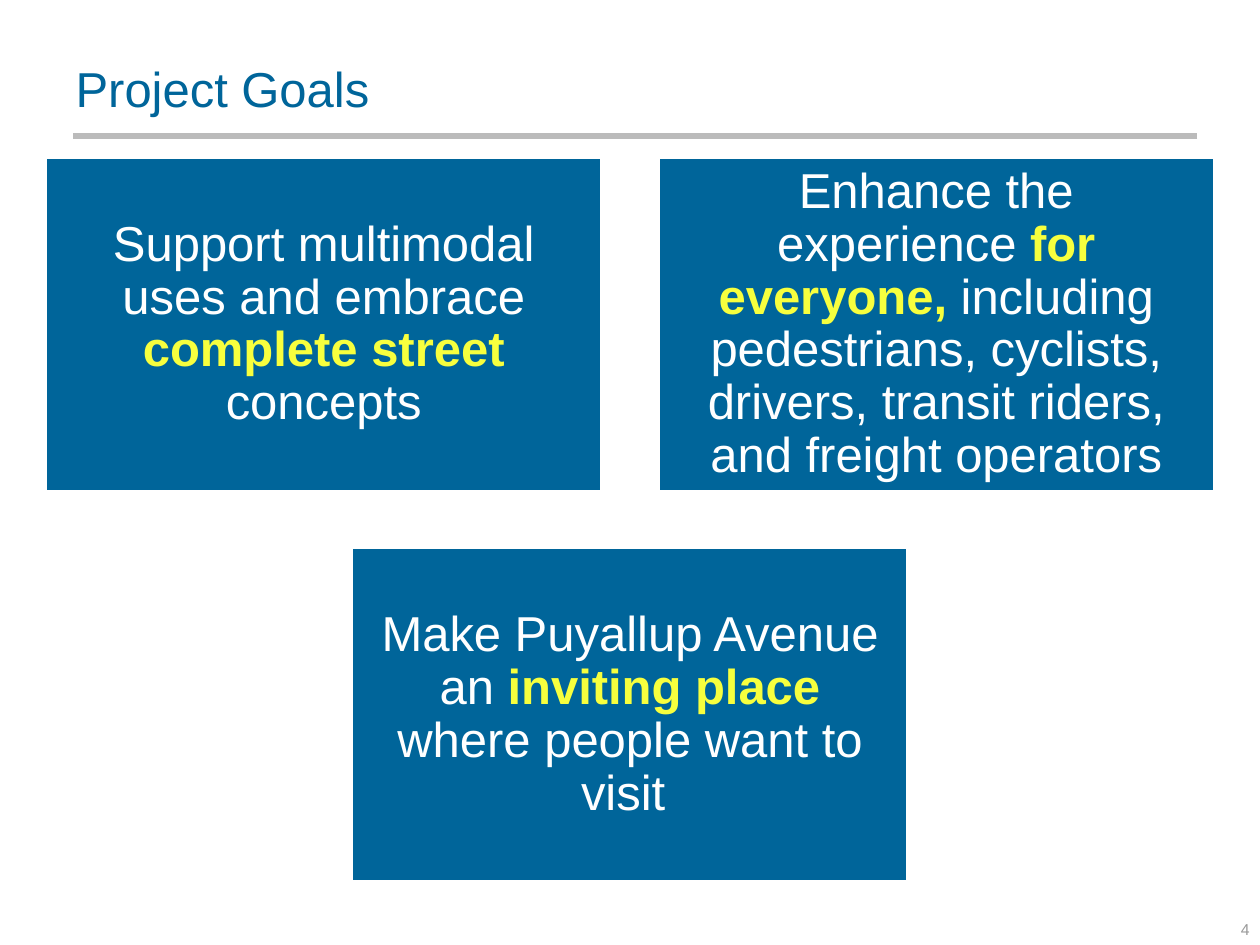
from lxml import etree
from pptx import Presentation
from pptx.dml.color import RGBColor
from pptx.enum.shapes import MSO_CONNECTOR, MSO_SHAPE
from pptx.enum.text import MSO_ANCHOR, PP_ALIGN
from pptx.oxml.ns import qn
from pptx.util import Pt

RECTANGLE = MSO_SHAPE.RECTANGLE
STRAIGHT = MSO_CONNECTOR.STRAIGHT
MIDDLE = MSO_ANCHOR.MIDDLE
LEFT, CENTER, RIGHT = PP_ALIGN.LEFT, PP_ALIGN.CENTER, PP_ALIGN.RIGHT

# Content: rows of goals, each goal a list of (text, highlighted)
TITLE = "Project Goals"
PAGE_NUMBER = "4"
GOAL_ROWS = [
    [
        [("Support multimodal uses and embrace ", False),
         ("complete street ", True),
         ("concepts", False)],
        [("Enhance the experience", False),
         (" for everyone,", True),
         (" including pedestrians, cyclists, drivers, transit riders, "
          "and freight operators", False)],
    ],
    [
        [("Make Puyallup Avenue an ", False),
         ("inviting place ", True),
         ("where people want to visit ", False)],
    ],
]

# Style and layout, in points
FONT = "Arial"
BLUE, WHITE, YELLOW = "00659A", "FFFFFF", "F7FF3E"
RULE_GRAY, NUMBER_GRAY = "BBBBBB", "999999"
SLIDE_WIDTH, SLIDE_HEIGHT = 720, 540
BOX_WIDTH, BOX_HEIGHT, GAP = 318, 191, 32
GOALS_TOP = 90
BOX_INSET = 8.4


def color(hex_code):
    return RGBColor.from_string(hex_code)


def set_insets(frame, inset):
    frame.margin_left = frame.margin_right = Pt(inset)
    frame.margin_top = frame.margin_bottom = Pt(inset)


def add_run(paragraph, text, size, hex_code, bold=False):
    run = paragraph.add_run()
    run.text = text
    run.font.name = FONT
    run.font.size = Pt(size)
    run.font.bold = bold
    run.font.color.rgb = color(hex_code)


def add_goal(slide, left, top, parts):
    box = slide.shapes.add_shape(
        RECTANGLE, Pt(left), Pt(top), Pt(BOX_WIDTH), Pt(BOX_HEIGHT))
    box.shadow.inherit = False
    box.fill.solid()
    box.fill.fore_color.rgb = color(BLUE)
    box.line.color.rgb = color(WHITE)
    box.line.width = Pt(2)
    frame = box.text_frame
    frame.word_wrap = True
    frame.vertical_anchor = MIDDLE
    set_insets(frame, BOX_INSET)
    paragraph = frame.paragraphs[0]
    paragraph.alignment = CENTER
    paragraph.line_spacing = 0.9
    for text, highlighted in parts:
        add_run(paragraph, text, 28, YELLOW if highlighted else WHITE, highlighted)


def main():
    presentation = Presentation()
    presentation.slide_width = Pt(SLIDE_WIDTH)
    presentation.slide_height = Pt(SLIDE_HEIGHT)
    slide = presentation.slides.add_slide(presentation.slide_layouts[5])

    # Title
    title = slide.shapes.title
    title.left, title.top, title.width, title.height = Pt(36), Pt(21.6), Pt(648), Pt(57.6)
    title.text_frame.vertical_anchor = MIDDLE
    paragraph = title.text_frame.paragraphs[0]
    paragraph.alignment = LEFT
    add_run(paragraph, TITLE, 28, BLUE)

    # Rule below the title
    rule = slide.shapes.add_connector(STRAIGHT, Pt(684), Pt(77.8), Pt(41.8), Pt(77.8))
    rule.line.color.rgb = color(RULE_GRAY)
    rule.line.width = Pt(3)
    etree.SubElement(rule._element.spPr, qn("a:effectLst"))

    # Goals, each row centred on the slide
    for row, goals in enumerate(GOAL_ROWS):
        row_width = len(goals) * (BOX_WIDTH + GAP) - GAP
        row_left = (SLIDE_WIDTH - row_width) / 2
        top = GOALS_TOP + row * (BOX_HEIGHT + GAP)
        for column, parts in enumerate(goals):
            add_goal(slide, row_left + column * (BOX_WIDTH + GAP), top, parts)

    # Page number
    number = slide.shapes.add_textbox(Pt(696), Pt(523.5), Pt(18), Pt(15))
    frame = number.text_frame
    frame.word_wrap = True
    frame.vertical_anchor = MIDDLE
    set_insets(frame, 0)
    frame.paragraphs[0].alignment = RIGHT
    add_run(frame.paragraphs[0], PAGE_NUMBER, 9, NUMBER_GRAY)

    presentation.save("out.pptx")


if __name__ == "__main__":
    main()
